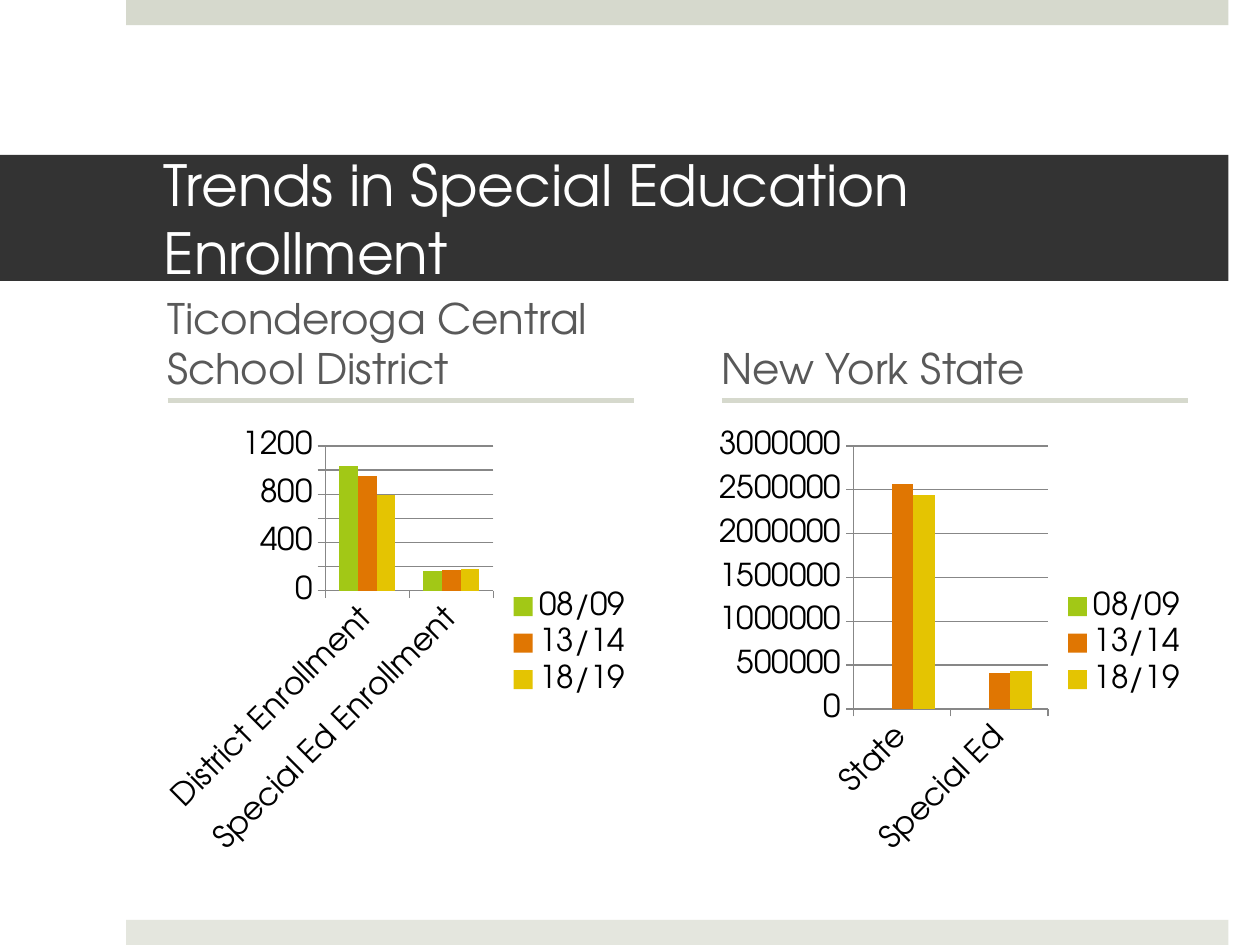
import lxml.etree
import pptx
import pptx.chart.data
import pptx.dml.color
import pptx.enum.chart
import pptx.enum.shapes
import pptx.enum.text
import pptx.oxml.ns
import pptx.util
from dataclasses import dataclass

Pt = pptx.util.Pt
rgb = pptx.dml.color.RGBColor.from_string


@dataclass(frozen=True)
class Theme:
    font: str = "TeX Gyre Adventor"
    title_size: float = 32.4
    heading_size: float = 24
    chart_size: float = 18
    title_band: str = "333333"
    title_text: str = "FFFFFF"
    heading_text: str = "595959"
    chart_text: str = "000000"
    top_band: str = "D6D9CD"
    bottom_band: str = "E4E6DE"
    grid: str = "878787"
    years: tuple = ("A2C816", "E07602", "E4C402")


theme = Theme()


def add_band(left, top, width, height, color):
    band = slide.shapes.add_shape(
        pptx.enum.shapes.MSO_SHAPE.RECTANGLE, Pt(left), Pt(top), Pt(width), Pt(height))
    band.shadow.inherit = False
    band.fill.solid()
    band.fill.fore_color.rgb = rgb(color)
    band.line.fill.background()
    return band


def write_text(frame, text, size, color, anchor):
    frame.word_wrap = True
    frame.vertical_anchor = anchor
    paragraph = frame.paragraphs[0]
    paragraph.alignment = pptx.enum.text.PP_ALIGN.LEFT
    run = paragraph.add_run()
    run.text = text
    run.font.name = theme.font
    run.font.size = Pt(size)
    run.font.color.rgb = rgb(color)


deck = pptx.Presentation()
deck.slide_width, deck.slide_height = Pt(720), Pt(540)
slide = deck.slides.add_slide(deck.slide_layouts[6])

add_band(72, 0, 630, 14.4, theme.top_band)
add_band(72, 525.6, 630, 14.4, theme.bottom_band)

title = add_band(0, 88.56, 702, 72, theme.title_band).text_frame
title.margin_left, title.margin_right = Pt(93.6), Pt(21.6)
title.margin_top = title.margin_bottom = Pt(3.6)
write_text(title, "Trends in Special Education Enrollment", theme.title_size,
           theme.title_text, pptx.enum.text.MSO_ANCHOR.MIDDLE)

years = ("08/09", "13/14", "18/19")
regions = (
    (88.56, "Ticonderoga Central School District",
     ("District Enrollment", "Special Ed Enrollment"),
     ((1030, 160), (950, 170), (790, 180))),
    (405.36, "New York State", ("State", "Special Ed"),
     ((None, None), (2570000, 410000), (2440000, 430000))),
)

for left, region, groups, enrollment in regions:
    rule = slide.shapes.add_connector(
        pptx.enum.shapes.MSO_CONNECTOR.STRAIGHT,
        Pt(left + 7.2), Pt(228.96), Pt(left + 273.6), Pt(228.96))
    rule.line.color.rgb = rgb(theme.top_band)
    rule.line.width = Pt(3)
    lxml.etree.SubElement(rule._element.spPr, pptx.oxml.ns.qn("a:effectLst"))

    heading = slide.shapes.add_textbox(Pt(left), Pt(159.12), Pt(280.8), Pt(69.12))
    write_text(heading.text_frame, region, theme.heading_size, theme.heading_text,
               pptx.enum.text.MSO_ANCHOR.BOTTOM)

    trend = pptx.chart.data.CategoryChartData()
    trend.categories = groups
    for year, counts in zip(years, enrollment):
        trend.add_series(year, counts)
    chart = slide.shapes.add_chart(
        pptx.enum.chart.XL_CHART_TYPE.COLUMN_CLUSTERED,
        Pt(left), Pt(241.2), Pt(280.8), Pt(252.72), trend).chart
    chart.has_title = False
    chart.font.name = theme.font
    chart.font.size = Pt(theme.chart_size)
    chart.font.color.rgb = rgb(theme.chart_text)
    chart.has_legend = True
    chart.legend.position = pptx.enum.chart.XL_LEGEND_POSITION.RIGHT
    chart.legend.include_in_layout = False

    for axis in (chart.category_axis, chart.value_axis):
        axis.major_tick_mark = pptx.enum.chart.XL_TICK_MARK.OUTSIDE
        axis.format.line.color.rgb = rgb(theme.grid)
        axis.format.line.width = Pt(0.75)
    chart.value_axis.has_major_gridlines = True
    grid_line = chart.value_axis.major_gridlines.format.line
    grid_line.color.rgb = rgb(theme.grid)
    grid_line.width = Pt(0.75)

    columns = chart.plots[0]
    columns.gap_width = 150
    columns.vary_by_categories = False
    for column, color in zip(columns.series, theme.years):
        column.format.fill.solid()
        column.format.fill.fore_color.rgb = rgb(color)

deck.save("out.pptx")
